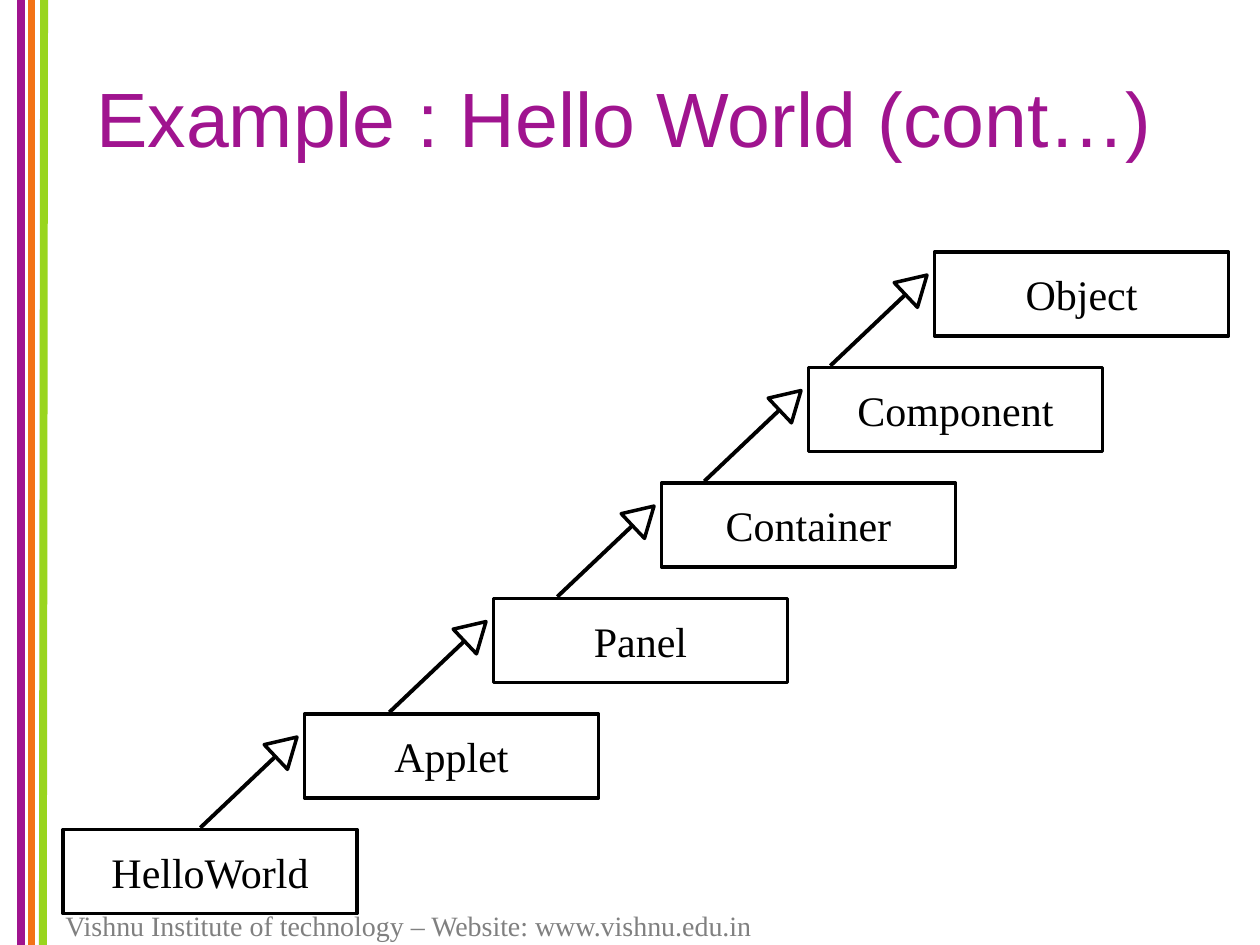
from typing import NamedTuple

import pptx
import pptx.dml.color
import pptx.enum.shapes
import pptx.enum.text
import pptx.util
from lxml import etree

Pt = pptx.util.Pt
Shape = pptx.enum.shapes.MSO_SHAPE
Align = pptx.enum.text.PP_ALIGN
Anchor = pptx.enum.text.MSO_ANCHOR

SERIF = "Times New Roman"
BLACK, WHITE, PURPLE = "000000", "FFFFFF", "A0148F"
BOX_WIDE, BOX_HIGH = 168, 48
LOW_TOP, STEP = 474, 66


class Stripe(NamedTuple):
    top_x: float
    low_x: float
    hue: str


class Box(NamedTuple):
    name: str
    left: float
    top: float


class Style(NamedTuple):
    face: str
    size: float
    hue: str


STRIPES = [
    Stripe(12.24, 12.24, PURPLE),
    Stripe(18, 18, "F37216"),
    Stripe(25.2, 24.5, "99D51E"),
]
NAMES = ["HelloWorld", "Applet", "Panel", "Container", "Component", "Object"]
LEFTS = [36, 174, 282, 378, 462, 534]
BOXES = [
    Box(name, left, LOW_TOP - STEP * rank)
    for rank, (name, left) in enumerate(zip(NAMES, LEFTS))
]


def tint(code: str) -> pptx.dml.color.RGBColor:
    return pptx.dml.color.RGBColor.from_string(code)


def write(frame, text: str, style: Style, **form) -> None:
    """Put one styled paragraph in a frame; form holds frame settings."""
    for key, value in form.items():
        setattr(frame, key, value)
    part = frame.paragraphs[0]
    part.text = text
    for key, value in {"name": style.face, "size": Pt(style.size)}.items():
        setattr(part.font, key, value)
    part.font.color.rgb = tint(style.hue)


def add_text(shapes, area: tuple, text: str, style: Style, **form) -> None:
    label = shapes.add_textbox(*map(Pt, area))
    write(label.text_frame, text, style, **form)


def add_line(shapes, start: tuple, end: tuple, hue: str, width: float) -> None:
    line = shapes.add_connector(
        pptx.enum.shapes.MSO_CONNECTOR.STRAIGHT, *map(Pt, start + end)
    )
    line.line.color.rgb = tint(hue)
    line.line.width = Pt(width)
    etree.SubElement(
        line._element.spPr, pptx.oxml.ns.qn("a:effectLst")
    )


def add_form(shapes, kind: Shape, area: tuple):
    """Add a white preset shape with a black outline."""
    form = shapes.add_shape(kind, *map(Pt, area))
    form.shadow.inherit = False
    form.fill.solid()
    form.fill.fore_color.rgb = tint(WHITE)
    form.line.color.rgb = tint(BLACK)
    form.line.width = Pt(2)
    return form


def add_box(shapes, box: Box) -> None:
    area = (box.left, box.top, BOX_WIDE, BOX_HIGH)
    form = add_form(shapes, Shape.RECTANGLE, area)
    write(form.text_frame, box.name, Style(SERIF, 24, BLACK),
          vertical_anchor=Anchor.MIDDLE, word_wrap=True)
    form.text_frame.paragraphs[0].alignment = Align.CENTER


def add_arrow(shapes, box: Box) -> None:
    """Draw the inheritance arrow that ends at the left side of a box."""
    group = shapes.add_group_shape().shapes
    x, y = box.left, box.top
    head = add_form(group, Shape.ISOSCELES_TRIANGLE,
                    (x - 20, y + 10.6, 19.4, 16.6))
    head.rotation = 46.7
    add_line(group, (x - 17, y + 24.7), (x - 59.5, y + 65), BLACK, 2.25)


def main() -> None:
    deck = pptx.Presentation()
    deck.slide_width, deck.slide_height = Pt(720), Pt(540)
    shapes = deck.slides.add_slide(deck.slide_layouts[6]).shapes

    for stripe in STRIPES:
        add_line(shapes, (stripe.top_x, 0), (stripe.low_x, 540),
                 stripe.hue, 4.5)
    add_text(shapes, (30.24, 515.5, 412.6, 26.6),
             "Vishnu Institute of technology – Website: www.vishnu.edu.in",
             Style(SERIF, 16, "808080"), word_wrap=False)
    add_text(shapes, (48, 21.6, 636, 90), "Example : Hello World (cont…)",
             Style("Arial", 44, PURPLE),
             word_wrap=True, vertical_anchor=Anchor.MIDDLE)

    for box in BOXES:
        add_box(shapes, box)
    for box in BOXES[1:]:
        add_arrow(shapes, box)
    deck.save("out.pptx")


if __name__ == "__main__":
    main()
